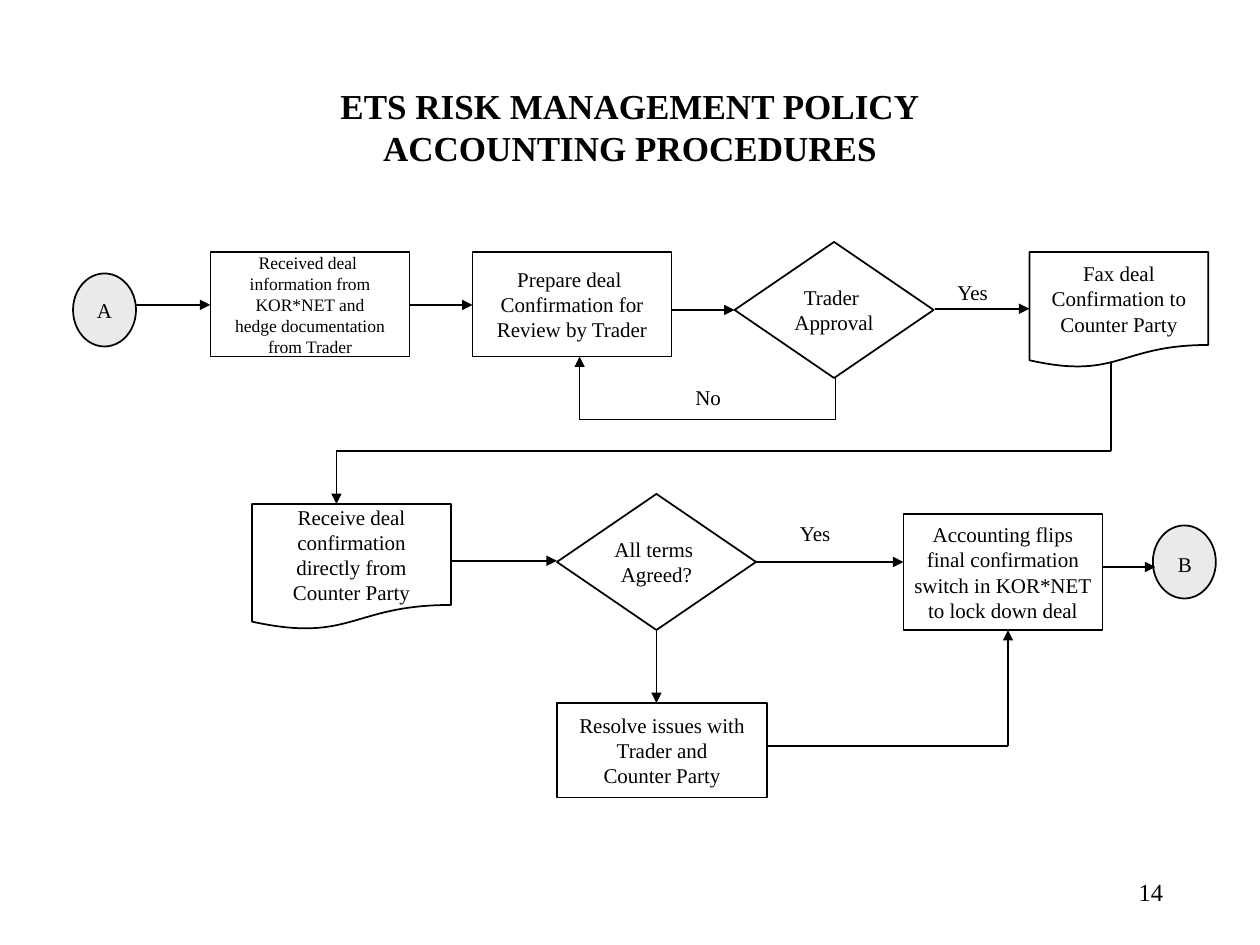
from itertools import pairwise
from pptx import Presentation
from pptx.dml.color import RGBColor
from pptx.enum.shapes import MSO_CONNECTOR, MSO_SHAPE
from pptx.enum.text import MSO_ANCHOR, PP_ALIGN
from pptx.oxml.ns import qn
from pptx.util import Inches, Pt
from lxml.etree import SubElement

FONT = "Times New Roman"
COLORS = {"ink": "000000", "paper": "FFFFFF", "end": "EAEAEA"}
TITLE = "ETS RISK MANAGEMENT POLICY\nACCOUNTING PROCEDURES"
KINDS = {
    "end": MSO_SHAPE.FLOWCHART_CONNECTOR,
    "step": MSO_SHAPE.FLOWCHART_PROCESS,
    "test": MSO_SHAPE.FLOWCHART_DECISION,
    "page": MSO_SHAPE.FLOWCHART_DOCUMENT,
}
NODES = [
    ("end", (0.58, 2.17, 0.5, 0.58), 12, ["A"]),
    ("step", (1.67, 2, 1.58, 0.83), 10,
     ["Received deal ", "information from", "KOR*NET and",
      "hedge documentation", "from Trader"]),
    ("step", (3.75, 2, 1.58, 0.83), 12,
     ["Prepare deal ", "Confirmation for", "Review by Trader"]),
    ("test", (5.83, 1.92, 1.58, 1.08), 12, ["Trader ", "Approval"]),
    ("page", (8.17, 2, 1.42, 0.92), 12,
     ["Fax deal", "Confirmation to", "Counter Party"]),
    ("page", (2, 4, 1.58, 1), 12,
     ["Receive deal", "confirmation", "directly from", "Counter Party"]),
    ("test", (4.42, 3.92, 1.58, 1.08), 12, ["All terms ", "Agreed?"]),
    ("step", (7.17, 4.08, 1.58, 0.92), 12,
     ["Accounting flips", "final confirmation", "switch in KOR*NET",
      "to lock down deal"]),
    ("step", (4.42, 5.58, 1.67, 0.75), 12,
     ["Resolve issues with", "Trader and", "Counter Party"]),
    ("end", (9.15, 4.17, 0.5, 0.58), 12, []),
]
ROUTES = [
    [(1.08, 2.42), (1.67, 2.42)],
    [(3.25, 2.42), (3.75, 2.42)],
    [(5.33, 2.46), (5.83, 2.46)],
    [(7.42, 2.45), (8.17, 2.45)],
    [(6.63, 3), (6.63, 3.33), (4.6, 3.33), (4.6, 2.83)],
    [(8.82, 2.88), (8.82, 3.58), (2.67, 3.58), (2.67, 4)],
    [(3.58, 4.45), (4.42, 4.45)],
    [(6, 4.46), (7.17, 4.46)],
    [(5.21, 5), (5.21, 5.58)],
    [(6.08, 5.92), (8, 5.92), (8, 5)],
    [(8.75, 4.5), (9.17, 4.5)],
]
LABELS = [
    ("Yes", (7.5, 2.17, 0.46, 0.3)),
    ("No", (5.42, 3, 0.46, 0.3)),
    ("Yes", (6.25, 4.08, 0.46, 0.3)),
    ("B", (9.25, 4.33, 0.32, 0.3)),
]
NUMBER = ("14", (7.25, 6.83, 2.08, 0.5))


def color(name):
    """Return a named colour."""
    return RGBColor.from_string(COLORS[name])


def write(shape, lines, size, align, wrap=False, bold=False, anchor=MSO_ANCHOR.MIDDLE):
    """Fill a shape with one paragraph per line."""
    frame = shape.text_frame
    frame.word_wrap = wrap
    frame.vertical_anchor = anchor
    for i, line in enumerate(lines):
        para = frame.add_paragraph() if i else frame.paragraphs[0]
        para.text = line
        para.alignment = align
        font = para.font
        font.name, font.size, font.bold = FONT, Pt(size), bold
        font.color.rgb = color("ink")


def add_node(slide, kind, box, size, lines):
    """Add one flowchart symbol."""
    shape = slide.shapes.add_shape(KINDS[kind], *map(Inches, box))
    shape.shadow.inherit = False
    shape.fill.solid()
    shape.fill.fore_color.rgb = color("end" if kind == "end" else "paper")
    shape.line.color.rgb = color("ink")
    shape.line.width = Pt(1)
    write(shape, lines, size, PP_ALIGN.CENTER)


def add_route(slide, points):
    """Join points with lines and end in an arrowhead."""
    for start, end in pairwise(points):
        line = slide.shapes.add_connector(
            MSO_CONNECTOR.STRAIGHT, *map(Inches, start + end))
        line.line.color.rgb = color("ink")
        line.line.width = Pt(1)
        props = line._element.spPr
        SubElement(props, qn("a:effectLst"))
    SubElement(props.find(qn("a:ln")), qn("a:tailEnd"), type="triangle")


def add_text(slide, text, box, size, align, **style):
    """Add a text box."""
    shape = slide.shapes.add_textbox(*map(Inches, box))
    write(shape, [text], size, align, **style)


def main():
    """Build the flowchart slide."""
    deck = Presentation()
    deck.slide_width, deck.slide_height = Inches(10), Inches(7.5)
    slide = deck.slides.add_slide(deck.slide_layouts[5])
    title = slide.shapes.title
    title.left, title.top = Inches(0.75), Inches(0.5)
    title.width, title.height = Inches(8.5), Inches(1)
    write(title, [TITLE], 20, PP_ALIGN.CENTER, wrap=True, bold=True)
    for node in NODES:
        add_node(slide, *node)
    for points in ROUTES:
        add_route(slide, points)
    for text, box in LABELS:
        add_text(slide, text, box, 12, PP_ALIGN.LEFT, anchor=MSO_ANCHOR.TOP)
    add_text(slide, *NUMBER, 14, PP_ALIGN.RIGHT, wrap=True)
    deck.save("out.pptx")


if __name__ == "__main__":
    main()
